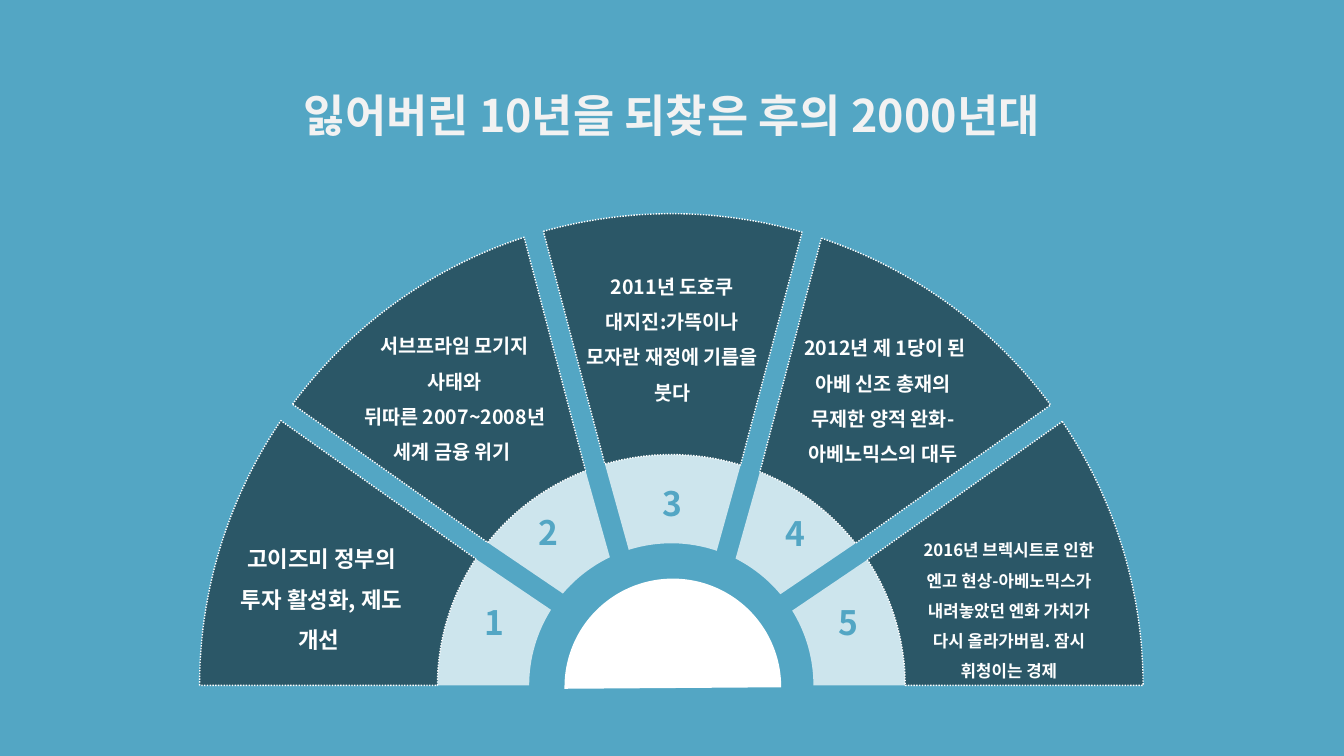
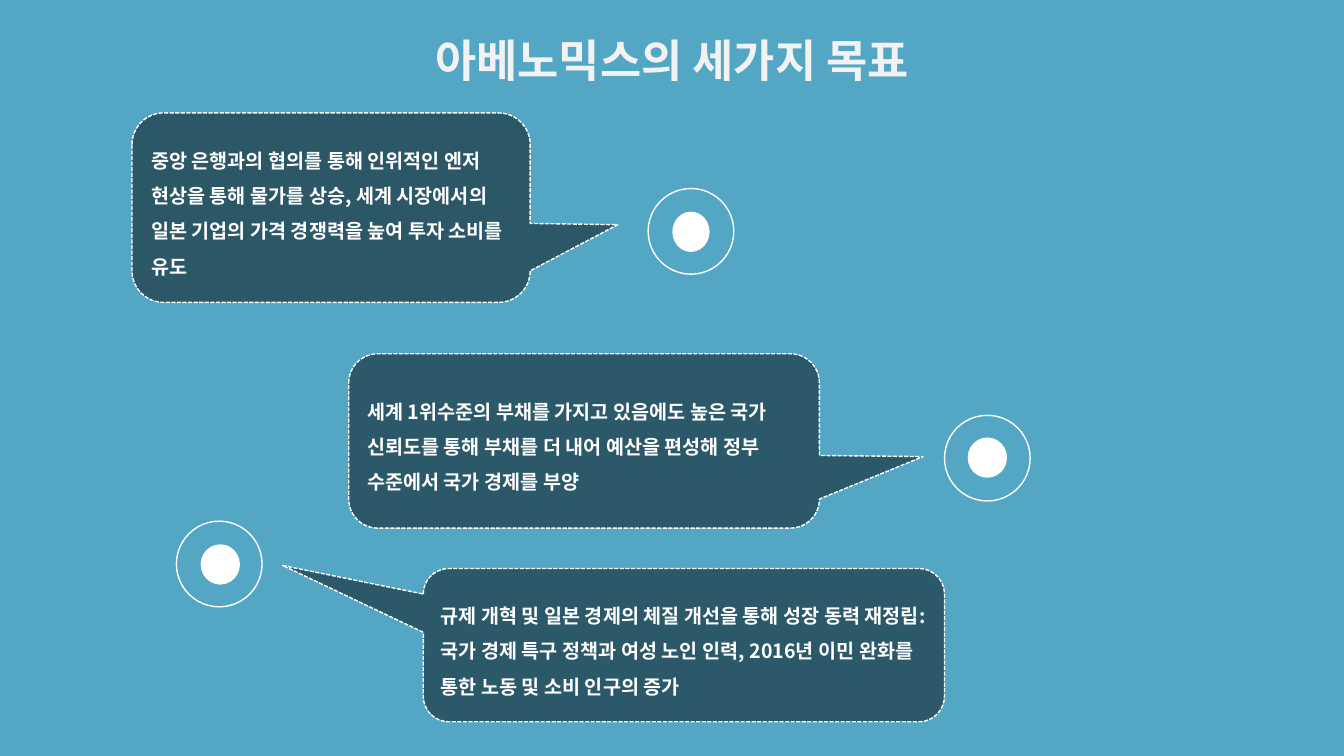
from dataclasses import dataclass
from math import asin, cos, degrees, radians, sin, tan

from lxml import etree
from pptx import Presentation
from pptx import util as u
from pptx.dml.color import RGBColor
from pptx.enum import dml, shapes, text
from pptx.oxml.ns import qn


@dataclass(frozen=True)
class Theme:
    font: str = "Noto Sans CJK KR"
    back: str = "53A6C4"
    white: str = "FFFFFF"
    dark: str = "000000"
    title: str = "F2F2F2"
    dim: int = 47
    pale: int = 71
    head: int = 32
    num: int = 24
    body: int = 14
    lead: float = 1.5


T = Theme()
LEFT, MID = text.PP_ALIGN.LEFT, text.PP_ALIGN.CENTER
DOT, DASH = dml.MSO_LINE.ROUND_DOT, dml.MSO_LINE.SQUARE_DOT
KIND = shapes.MSO_SHAPE

HUB = (6.66, 6.8)
RADII = ((1.41, 1.41), (2.32, 2.29), (4.68, 4.68))

FAN_TITLE = ("잃어버린 10년을 되찾은 후의 2000년대", (2.36, 0.55, 8.61, 0.91))
FAN = [
    {"edges": ((180, 0), (145, 0.07)), "box": (2.13, 5.23, 2.12, 1.31), "size": 16,
     "text": ["고이즈미 정부의 투자 활성화, 제도 개선 "]},
    {"edges": ((145, -0.13), (105, 0.26)), "box": (3.45, 3.15, 2.12, 1.51), "size": T.body,
     "text": ["서브프라임 모기지 사태와", "뒤따른 2007~2008년 세계 금융 위기 "]},
    {"edges": ((105, 0.06), (75, -0.09)), "box": (5.71, 2.56, 1.92, 1.51), "size": T.body,
     "text": ["2011년 도호쿠 대지진:가뜩이나 모자란 재정에 기름을 붓다"]},
    {"edges": ((75, -0.29), (35, 0.12)), "box": (7.7, 3.17, 2.12, 1.51), "size": T.body,
     "text": [" 2012년 제 1당이 된 아베 신조 총재의 무제한 양적 완화-아베노믹스의 대두"]},
    {"edges": ((35, -0.08), (0, 0)), "box": (8.95, 5.21, 2.12, 1.61), "size": 12,
     "text": ["2016년 브렉시트로 인한 엔고 현상-아베노믹스가 내려놓았던 엔화 가치가 "
              "다시 올라가버림. 잠시 휘청이는 경제"]},
]
CORE = (5.6, 5.74, 2.15, 2.15)
CORE_ADJ = (107.42, 0.1)

GOAL_TITLE = ("아베노믹스의 세가지 목표", (3.65, 0.01, 6.04, 0.91))
RING = 0.85
GOALS = [
    {"box": (1.31, 1.12, 3.95, 1.88), "tail": (0.72, 0.09), "dim": T.dim,
     "ring": (6.43, 1.87), "pupil": (6.67, 2.1, 0.37, 0.4),
     "text": "중앙 은행과의 협의를 통해 인위적인 엔저 현상을 통해 물가를 상승, "
             "세계 시장에서의 일본 기업의 가격 경쟁력을 높여 투자 소비를 유도"},
    {"box": (3.46, 3.51, 4.67, 1.73), "tail": (0.72, 0.09), "dim": 46,
     "ring": (9.37, 4.12), "pupil": (9.6, 4.34, 0.39, 0.4),
     "text": "세계 1위수준의 부채를 가지고 있음에도 높은 국가 신뢰도를 통해 "
             "부채를 더 내어 예산을 편성해 정부 수준에서 국가 경제를 부양"},
    {"box": (4.2, 5.64, 5.17, 1.52), "tail": (-0.77, -0.52), "dim": 46,
     "ring": (1.75, 5.17), "pupil": (1.99, 5.4, 0.39, 0.4),
     "text": "규제 개혁 및 일본 경제의 체질 개선을 통해 성장 동력 재정립:"
             "국가 경제 특구 정책과 여성 노인 인력, 2016년 이민 완화를 통한 "
             "노동 및 소비 인구의 증가"},
]


def rgb(code):
    return RGBColor.from_string(code)


def inch(box):
    return [u.Inches(v) for v in box]


def paint(shape, fill=None, alpha=None, line=False, dash=None):
    shape.shadow.inherit = False
    if fill:
        shape.fill.solid()
        shape.fill.fore_color.rgb = rgb(fill)
    else:
        shape.fill.background()
    if alpha:
        clr = shape._element.spPr.find(qn("a:solidFill")).find(qn("a:srgbClr"))
        etree.SubElement(clr, qn("a:alpha")).set("val", str(alpha * 1000))
    if line:
        shape.line.color.rgb = rgb(T.white)
        shape.line.width = u.Pt(1)
        if dash:
            shape.line.dash_style = dash
    else:
        shape.line.fill.background()
    return shape


def write(shape, paras, size, color=T.white, align=MID, lead=T.lead):
    frame = shape.text_frame
    frame.word_wrap = True
    for i, words in enumerate(paras):
        para = frame.add_paragraph() if i else frame.paragraphs[0]
        para.alignment = align
        if lead:
            para.line_spacing = lead
        run = para.add_run()
        run.text = words
        font = run.font
        font.size, font.bold = u.Pt(size), True
        font.color.rgb = rgb(color)
        font.name = T.font
        face = etree.SubElement(run._r.get_or_add_rPr(), qn("a:ea"))
        face.set("typeface", T.font)
    return frame


def label(slide, paras, box, size, color=T.white):
    frame = write(slide.shapes.add_textbox(*inch(box)), paras, size, color)
    frame.auto_size = text.MSO_AUTO_SIZE.SHAPE_TO_FIT_TEXT


def start(deck):
    slide = deck.slides.add_slide(deck.slide_layouts[6])
    slide.background.fill.solid()
    slide.background.fill.fore_color.rgb = rgb(T.back)
    return slide


def head(slide, title):
    words, box = title
    label(slide, [words], box, T.head, T.title)


def turns(radius, edges):
    first, last = [radians(angle + degrees(asin(shift / radius[1])))
                   for angle, shift in edges]
    return [first, (first + last) / 2, last]


def spot(radius, angle, pull=0):
    wide, tall = radius
    x = HUB[0] + wide * (cos(angle) - pull * sin(angle))
    y = HUB[1] - tall * (sin(angle) + pull * cos(angle))
    return u.Inches(x), u.Inches(y)


def bend(leg, radius, first, last, left, top):
    pull = 4 / 3 * tan((last - first) / 4)
    curve = etree.Element(qn("a:cubicBezTo"))
    for x, y in (spot(radius, first, pull), spot(radius, last, -pull), spot(radius, last)):
        point = etree.SubElement(curve, qn("a:pt"))
        point.set("x", str(x - left))
        point.set("y", str(y - top))
    leg.getparent().replace(leg, curve)


def band(slide, inner, outer, edges):
    arcs = [(outer, turns(outer, edges)), (inner, turns(inner, edges)[::-1])]
    points = [spot(radius, angle) for radius, angles in arcs for angle in angles]
    pen = slide.shapes.build_freeform(*points[0], scale=1.0)
    pen.add_line_segments(points[1:], close=True)
    shape = pen.convert_to_shape()
    legs = list(shape._element.iter(qn("a:lnTo")))
    for i, (radius, angles) in enumerate(arcs):
        for j in range(2):
            bend(legs[3 * i + j], radius, angles[j], angles[j + 1], shape.left, shape.top)
    return shape


def draw_fan(deck):
    slide = start(deck)
    near, mid, far = RADII
    for i, part in enumerate(FAN, 1):
        tab = paint(band(slide, near, mid, part["edges"]), T.white, T.pale)
        frame = write(tab, [str(i)], T.num, T.back, lead=None)
        frame.vertical_anchor = text.MSO_ANCHOR.MIDDLE
    for part in FAN:
        paint(band(slide, mid, far, part["edges"]), T.dark, T.dim, True, DOT)
    for part in FAN:
        label(slide, part["text"], part["box"], part["size"])
    core = paint(slide.shapes.add_shape(KIND.CHORD, *inch(CORE)), T.white)
    for i, val in enumerate(CORE_ADJ):
        core.adjustments[i] = val
    head(slide, FAN_TITLE)


def draw_goals(deck):
    slide = start(deck)
    head(slide, GOAL_TITLE)
    for goal in GOALS:
        paint(slide.shapes.add_shape(KIND.OVAL, *inch(goal["pupil"])), T.white)
        ring = inch(goal["ring"] + (RING, RING))
        paint(slide.shapes.add_shape(KIND.OVAL, *ring), line=True)
        note = slide.shapes.add_shape(KIND.ROUNDED_RECTANGULAR_CALLOUT, *inch(goal["box"]))
        paint(note, T.dark, goal["dim"], True, DASH)
        for i, val in enumerate(goal["tail"]):
            note.adjustments[i] = val
        frame = write(note, [goal["text"]], T.body, align=LEFT)
        frame.vertical_anchor = text.MSO_ANCHOR.MIDDLE


def main():
    deck = Presentation()
    deck.slide_width, deck.slide_height = u.Inches(40 / 3), u.Inches(7.5)
    draw_fan(deck)
    draw_goals(deck)
    deck.save("out.pptx")


if __name__ == "__main__":
    main()
